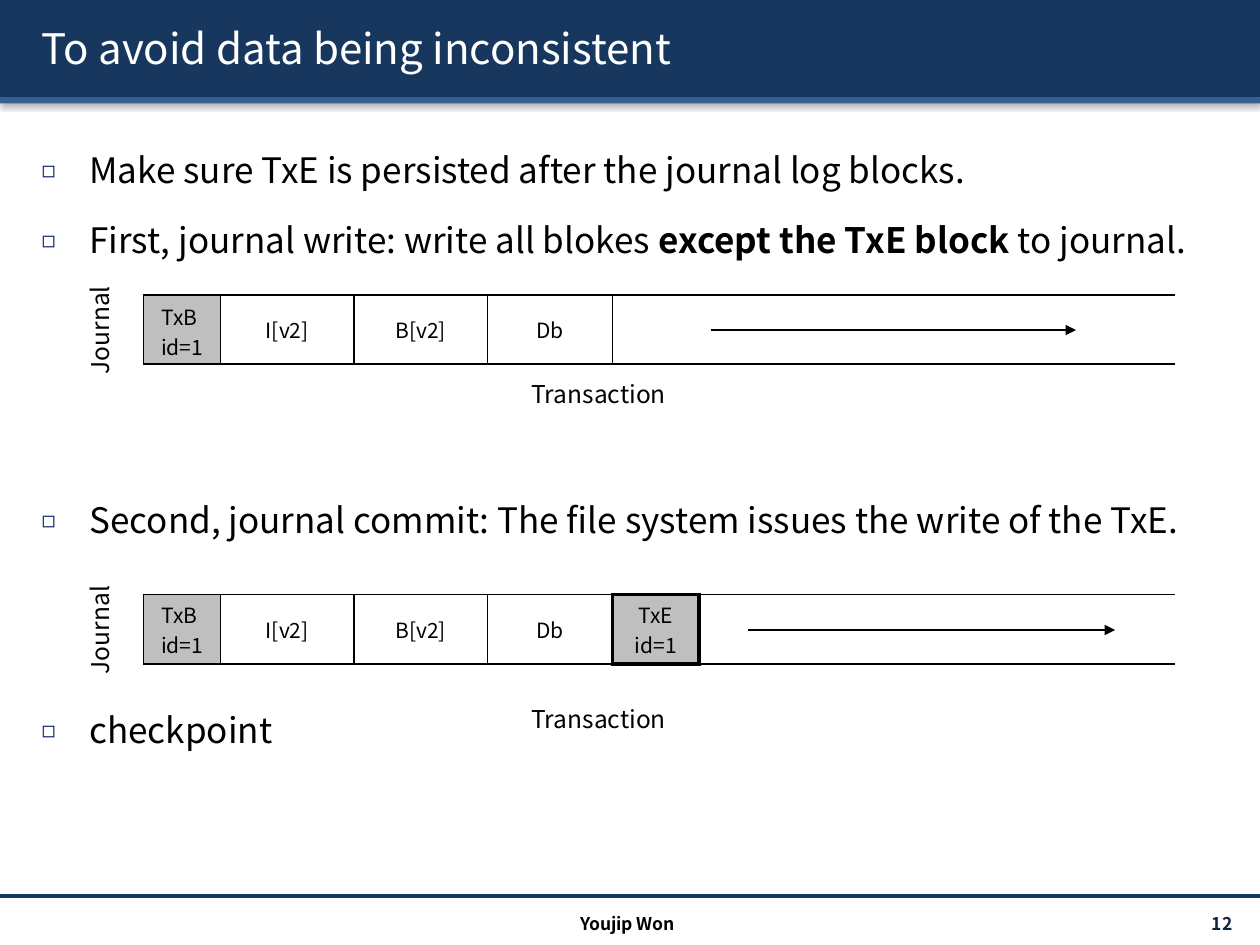
from dataclasses import dataclass

from lxml.etree import SubElement
from pptx import Presentation
from pptx.dml.color import RGBColor as Rgb
from pptx.enum.shapes import MSO_CONNECTOR as Link, MSO_SHAPE as Form
from pptx.enum.text import MSO_ANCHOR as Anchor, MSO_AUTO_SIZE as Fit, PP_ALIGN as Align
from pptx.oxml.ns import qn
from pptx.util import Inches, Pt

FONT = "Noto Sans CJK KR"
HUES = {"navy": "17375E", "blue": "376092", "mark": "002060", "page": "0F243E",
        "grey": "BFBFBF", "white": "FFFFFF", "black": "000000"}

deck = Presentation()
deck.slide_width, deck.slide_height = Inches(10), Inches(7.5)
COL, ROW = deck.slide_width / 100, deck.slide_height / 75  # 100 x 75 grid


@dataclass
class Cell:
    text: str
    cols: float
    hue: str = "white"
    bold: bool = False


@dataclass
class Journal:
    top: float
    cells: list[Cell]
    pad: float
    arrow: tuple[float, float, float]
    label: float
    note: float


@dataclass
class Point:
    runs: list[tuple[str, bool]]
    gap: int


def grid(x: float, y: float, *size: float) -> list[int]:
    spans = (x, y, *size)
    return [round(n * (ROW if i % 2 else COL)) for i, n in enumerate(spans)]


def rgb(hue: str) -> Rgb:
    return Rgb.from_string(HUES[hue])


def tint(parent, hue: str):
    fill = SubElement(parent, qn("a:solidFill"))
    return SubElement(fill, qn("a:srgbClr"), val=HUES[hue])


def shade(props, blur: float, dist: float, angle: int, alpha: int) -> None:
    """Add an outer shadow to shape or run properties."""
    for old in props.findall(qn("a:effectLst")):
        props.remove(old)
    drop = SubElement(SubElement(props, qn("a:effectLst")), qn("a:outerShdw"),
                      blurRad=str(Pt(blur)), dist=str(Pt(dist)),
                      dir=str(angle * 60000), algn="tl", rotWithShape="0")
    color = SubElement(drop, qn("a:srgbClr"), val=HUES["black"])
    SubElement(color, qn("a:alpha"), val=str(alpha * 1000))


def style(font, size: float, hue: str = "black", bold: bool = False) -> None:
    font.name, font.size, font.bold = FONT, Pt(size), bold
    font.color.rgb = rgb(hue)


def write(frame, text: str, *, size: float, hue: str = "black", bold: bool = False,
          align=Align.LEFT, anchor=Anchor.TOP) -> None:
    frame.word_wrap, frame.vertical_anchor = True, anchor
    for i, line in enumerate(text.split("\n")):
        para = frame.paragraphs[0] if i == 0 else frame.add_paragraph()
        para.alignment = align
        run = para.add_run()
        run.text = line
        style(run.font, size, hue, bold)


def label(box: tuple, text: str, turn: int = 0, **form) -> None:
    shape = slide.shapes.add_textbox(*grid(*box))
    shape.rotation = turn
    write(shape.text_frame, text, **form)


def bar(y: float, high: float, hue: str) -> None:
    shape = slide.shapes.add_shape(Form.RECTANGLE, *grid(0, y, 100, high))
    shape.fill.solid()
    shape.fill.fore_color.rgb = rgb(hue)
    shape.line.fill.background()
    shade(shape._element.spPr, 3.1, 1.6, 90, 38)


def rule(start: tuple, end: tuple, hue: str, width: float, head: bool = False) -> None:
    line = slide.shapes.add_connector(Link.STRAIGHT, *grid(*start), *grid(*end))
    line.line.color.rgb, line.line.width = rgb(hue), Pt(width)
    if head:
        SubElement(line.line._get_or_add_ln(), qn("a:tailEnd"), type="triangle")
    SubElement(line._element.spPr, qn("a:effectLst"))


def edge(cell, widths: dict[str, float]) -> None:
    """Set cell borders; a width of zero hides the side."""
    props = cell._tc.get_or_add_tcPr()
    for i, (side, width) in enumerate(widths.items()):
        line = props.makeelement(qn(f"a:ln{side}"), w=str(Pt(width)))
        props.insert(i, line)
        if width:
            tint(line, "black")
        else:
            SubElement(line, qn("a:noFill"))


def draw(log: Journal) -> None:
    cells = log.cells
    wide = sum(c.cols for c in cells)
    frame = slide.shapes.add_table(1, len(cells), *grid(11.4, log.top, wide, 5.5))
    table = frame.table
    table.first_row = table.horz_banding = False
    for i, part in enumerate(cells):
        table.columns[i].width = round(part.cols * COL)
        cell = table.cell(0, i)
        cell.margin_top = cell.margin_bottom = round(log.pad * ROW)
        cell.fill.solid()
        cell.fill.fore_color.rgb = rgb(part.hue)
        if part.text:
            write(cell.text_frame, part.text, size=12, align=Align.CENTER)
        cell.vertical_anchor = Anchor.MIDDLE
        last = i == len(cells) - 1
        thick = 2.25 if part.bold else 1
        left = 2.25 if i and cells[i - 1].bold else thick
        right = 0 if last else 2.25 if cells[i + 1].bold else thick
        edge(cell, {"L": left, "R": right, "T": thick, "B": thick})
    x, end, y = log.arrow
    rule((x, y), (end, y), "black", 1, head=True)
    label((3.3, log.label, 9.3, 3.4), "Journal", 270, size=14, align=Align.CENTER)
    label((41.2, log.note, 14.3, 3.4), "Transaction", size=14)


def bullet(para) -> None:
    props = para._p.get_or_add_pPr()
    props.set("marL", str(Inches(0.38)))
    props.set("indent", str(-Inches(0.38)))
    color = SubElement(props, qn("a:buClr"))
    SubElement(color, qn("a:srgbClr"), val=HUES["mark"])
    SubElement(props, qn("a:buSzPct"), val="65000")
    SubElement(props, qn("a:buFont"), typeface=FONT)
    SubElement(props, qn("a:buChar"), char="◻")


def fill(frame, points: list[Point]) -> None:
    frame.word_wrap, frame.auto_size = True, Fit.NONE
    for i, point in enumerate(points):
        para = frame.paragraphs[0] if i == 0 else frame.add_paragraph()
        para.line_spacing, para.space_before = Pt(36), Pt(point.gap)
        bullet(para)
        for text, bold in point.runs:
            run = para.add_run()
            run.text = text
            style(run.font, 20, bold=bold)


# Header bars and footer rule
slide = deck.slides.add_slide(deck.slide_layouts[1])
bar(0, 7.7, "navy")
bar(7.7, 0.5, "blue")
rule((0, 71.1), (100, 71.1), "navy", 2)

# Title and list, set in front of the bars
title, body = slide.shapes.title, slide.placeholders[1]
for shape, box in ((title, (2.3, 0.6, 96.1, 6.4)), (body, (2.3, 9.6, 96.1, 60.2))):
    shape.left, shape.top, shape.width, shape.height = grid(*box)
    slide.shapes._spTree.append(shape._element)
title.text_frame.auto_size = Fit.NONE
write(title.text_frame, "To avoid data being inconsistent", size=24, hue="white",
      anchor=Anchor.MIDDLE)
face = title.text_frame.paragraphs[0].runs[0].font._element
shade(face, 2, 2, 45, 100)
face.insert(1, face.find(qn("a:effectLst")))
fill(body.text_frame, [
    Point([("Make sure TxE is persisted after the journal log blocks.", False)], 0),
    Point([("First, journal write: write all blokes ", False),
           ("except the TxE block", True), (" to journal.", False)], 4),
    Point([("Second, journal commit: The file system issues the write of the TxE.",
            False)], 124),
    Point([("checkpoint", False)], 84),
])

# Footer
label((87.1, 72.1, 11.7, 2.4), "12", size=10, hue="page", bold=True,
      align=Align.RIGHT, anchor=Anchor.MIDDLE)
label((33.2, 72, 33.2, 2.4), "Youjip Won", size=10, bold=True, align=Align.CENTER)

# Journal before and after the commit
base = [Cell("TxB \nid=1", 6.1, "grey"), Cell("I[v2]", 10.6), Cell("B[v2]", 10.6),
        Cell("Db", 9.9)]
commit = Cell("TxE\nid=1", 6.9, "grey", bold=True)
draw(Journal(23.4, base + [Cell("", 44.7)], 0.5, (56.4, 85.4, 26.2), 24.5, 29.6))
draw(Journal(47.2, base + [commit, Cell("", 37.8)], 0.3, (59.4, 88.5, 50), 48.3, 55.4))

deck.save("out.pptx")
